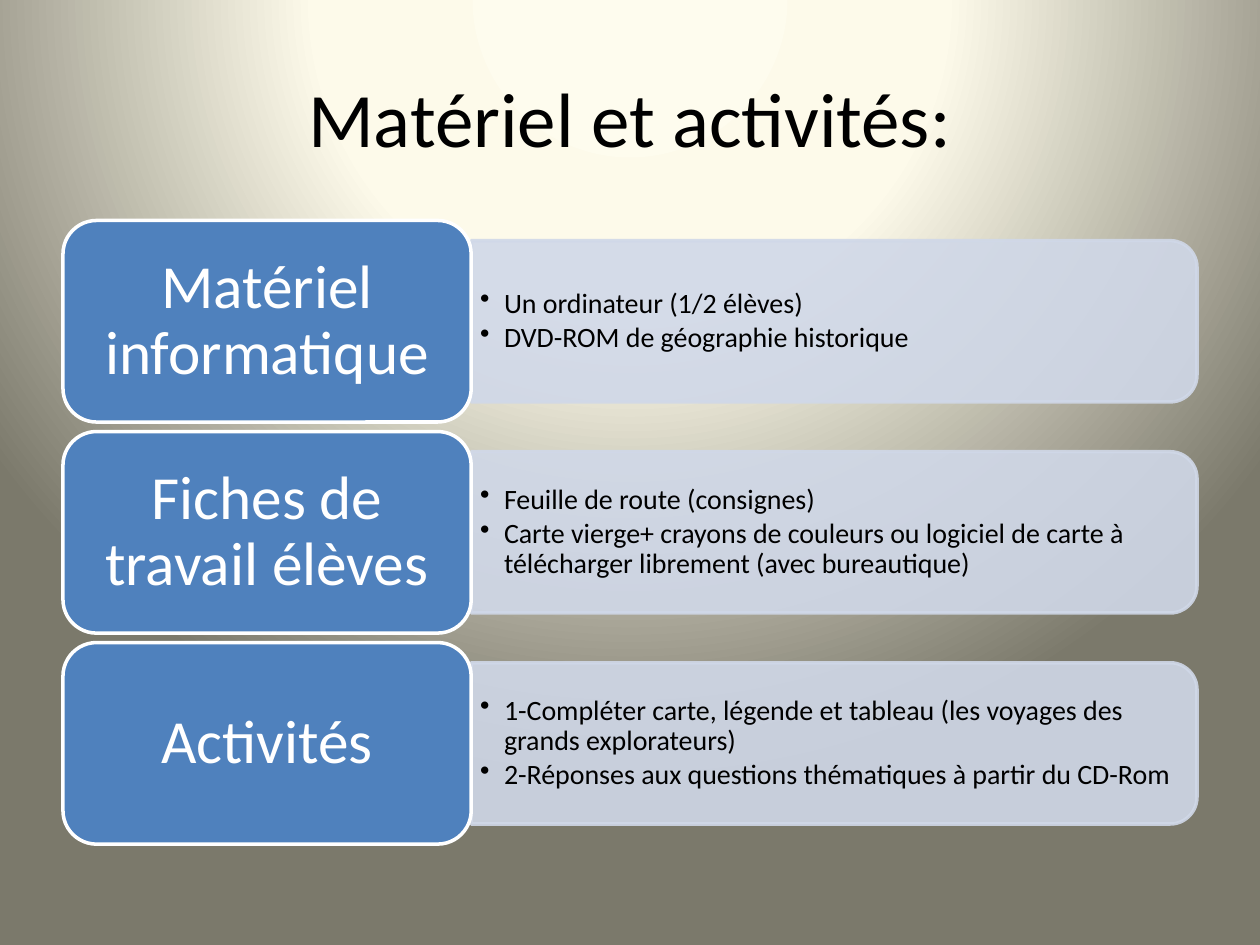
from pptx import Presentation
from pptx.dml.color import RGBColor
from pptx.enum import shapes, text
from pptx.oxml import parse_xml
from pptx.oxml.ns import nsdecls, qn
from pptx.util import Inches, Pt
from lxml import etree

# Content
TITLE = "Matériel et activités:"
ROWS = [
    ("Matériel informatique",
     ["Un ordinateur (1/2 élèves)",
      "DVD-ROM de géographie historique"]),
    ("Fiches de travail élèves",
     ["Feuille de route (consignes)",
      "Carte vierge+ crayons de couleurs ou logiciel de carte à "
      "télécharger librement (avec bureautique)"]),
    ("Activités",
     ["1-Compléter carte, légende et tableau (les voyages des grands explorateurs)",
      "2-Réponses aux questions thématiques à partir du CD-Rom"]),
]
BACKGROUND = [(0, "FEFCEE"), (40, "FDFAEA"), (100, "7B796B")]
BLACK, WHITE, BLUE, PALE = "000000", "FFFFFF", "4F81BD", "D0D8E8"

# Layout, in inches
LEFT, TOP, PITCH = 0.5, 1.75, 1.675
LABEL_W, LABEL_H = 3.24, 1.6
PANEL_W, PANEL_H = 5.76, 1.28
TEXT_W, TEXT_H = 5.7, 1.15


def color(value):
    return RGBColor.from_string(value)


def set_background(page):
    stops = "".join(f'<a:gs pos="{pos * 1000}"><a:srgbClr val="{value}"/></a:gs>'
                    for pos, value in BACKGROUND)
    page.element.cSld.insert(0, parse_xml(
        f'<p:bg {nsdecls("p", "a")}><p:bgPr><a:gradFill rotWithShape="1">'
        f'<a:gsLst>{stops}</a:gsLst><a:path path="circle">'
        '<a:fillToRect l="50000" t="-80000" r="50000" b="180000"/></a:path>'
        '</a:gradFill><a:effectLst/></p:bgPr></p:bg>'))


def add_span(para, words, size, value):
    span = para.add_run()
    span.text = words
    span.font.name = "Calibri"
    span.font.size = Pt(size)
    span.font.color.rgb = color(value)


def set_frame(frame, side, edge):
    frame.word_wrap = True
    frame.vertical_anchor = text.MSO_ANCHOR.MIDDLE
    frame.margin_left = frame.margin_right = Inches(side)
    frame.margin_top = frame.margin_bottom = Inches(edge)


def add_box(page, kind, left, top, width, height, fill, line):
    box = page.shapes.add_shape(kind, Inches(left), Inches(top),
                                Inches(width), Inches(height))
    box.shadow.inherit = False
    box.fill.solid()
    box.fill.fore_color.rgb = color(fill)
    box.line.color.rgb = color(line)
    box.line.width = Pt(2)
    return box


def add_panel(page, left, middle):
    # The shape is drawn upright and turned so its round corners face right
    box = add_box(page, shapes.MSO_SHAPE.ROUND_2_SAME_RECTANGLE,
                  left + (PANEL_W - PANEL_H) / 2, middle - PANEL_W / 2,
                  PANEL_H, PANEL_W, PALE, PALE)
    box.rotation = 90
    for paint in box._element.spPr.iter(qn("a:srgbClr")):
        etree.SubElement(paint, qn("a:alpha"), val="90000")


def add_bullets(page, left, middle, items):
    box = page.shapes.add_textbox(Inches(left), Inches(middle - TEXT_H / 2),
                                  Inches(TEXT_W), Inches(TEXT_H))
    frame = box.text_frame
    set_frame(frame, 0.07, 0.03)
    for index, item in enumerate(items):
        para = frame.add_paragraph() if index else frame.paragraphs[0]
        para.level = 1
        para.line_spacing = 0.9
        para.space_after = Pt(2.4)
        props = para._p.get_or_add_pPr()
        props.set("marL", str(Inches(0.19)))
        props.set("indent", str(-Inches(0.19)))
        etree.SubElement(props, qn("a:buChar"), char="•")
        add_span(para, item, 16, BLACK)


def add_label(page, top, words):
    box = add_box(page, shapes.MSO_SHAPE.ROUNDED_RECTANGLE,
                  LEFT, top, LABEL_W, LABEL_H, BLUE, WHITE)
    set_frame(box.text_frame, 0.15, 0.07)
    para = box.text_frame.paragraphs[0]
    para.alignment = text.PP_ALIGN.CENTER
    para.line_spacing = 0.9
    add_span(para, words, 35, WHITE)


def main():
    deck = Presentation()
    deck.slide_width, deck.slide_height = Inches(10), Inches(7.5)
    page = deck.slides.add_slide(deck.slide_layouts[5])
    set_background(page)

    # Title
    title = page.shapes.title
    title.left, title.top = Inches(0.5), Inches(0.3)
    title.width, title.height = Inches(9), Inches(1.25)
    title.text_frame.vertical_anchor = text.MSO_ANCHOR.MIDDLE
    para = title.text_frame.paragraphs[0]
    para.alignment = text.PP_ALIGN.CENTER
    add_span(para, TITLE, 44, BLACK)

    # Rows: panel, bullets, then the label on top
    for index, (label, items) in enumerate(ROWS):
        top = TOP + index * PITCH
        middle = top + LABEL_H / 2
        add_panel(page, LEFT + LABEL_W, middle)
        add_bullets(page, LEFT + LABEL_W, middle, items)
        add_label(page, top, label)

    deck.save("out.pptx")


if __name__ == "__main__":
    main()
